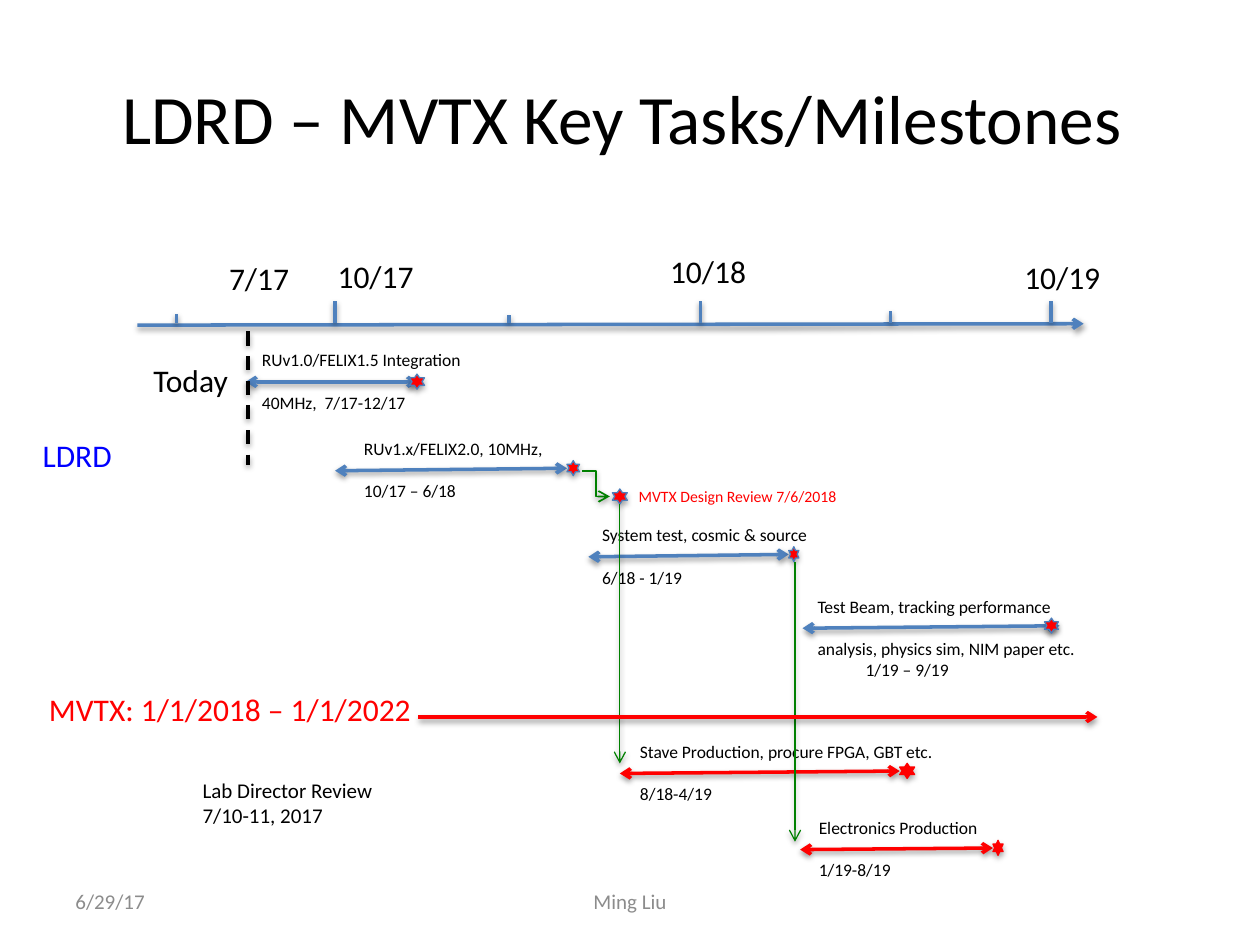
import pptx
import pptx.dml.color
import pptx.enum.dml
import pptx.enum.shapes
import pptx.enum.text
import pptx.oxml
import pptx.oxml.ns
import pptx.util

Pt = pptx.util.Pt
Kind = pptx.enum.shapes.MSO_CONNECTOR
Align = pptx.enum.text.PP_ALIGN
Anchor = pptx.enum.text.MSO_ANCHOR

BLACK, GREY, RED = "000000", "8C8C8C", "FF0000"
BLUE, EDGE, GREEN, LABEL = "4F81BD", "4B7EBC", "008000", "0000FF"


def tint(code):
    return pptx.dml.color.RGBColor.from_string(code)


class Chart:
    """Holds the text style and the current slide; all lengths are points."""

    font = "Calibri"

    def __init__(self, slide):
        self.slide = slide
        self.shapes = slide.shapes

    def shade(self, shape, dist, alpha):
        shape._element.spPr.append(pptx.oxml.parse_xml(
            f'<a:effectLst {pptx.oxml.ns.nsdecls("a")}>'
            f'<a:outerShdw blurRad="{Pt(3.1)}" dist="{Pt(dist)}" dir="5400000" rotWithShape="0">'
            f'<a:srgbClr val="{BLACK}"><a:alpha val="{alpha}000"/></a:srgbClr>'
            '</a:outerShdw></a:effectLst>'))

    def words(self, para, text, size, color):
        run = para.add_run()
        run.text = text
        run.font.name = self.font
        run.font.size = Pt(size)
        run.font.color.rgb = tint(color)

    def title(self, text, x, y, w, h, size):
        box = self.shapes.title
        box.left, box.top, box.width, box.height = Pt(x), Pt(y), Pt(w), Pt(h)
        frame = box.text_frame
        frame.vertical_anchor = Anchor.MIDDLE
        para = frame.paragraphs[0]
        para.alignment = Align.CENTER
        self.words(para, text, size, BLACK)

    def text(self, lines, x, y, w, h, size=18, color=BLACK, wrap=False,
             align=Align.LEFT, anchor=Anchor.TOP):
        frame = self.shapes.add_textbox(Pt(x), Pt(y), Pt(w), Pt(h)).text_frame
        frame.word_wrap = wrap
        frame.vertical_anchor = anchor
        for i, line in enumerate(lines):
            para = frame.add_paragraph() if i else frame.paragraphs[0]
            para.alignment = align
            self.words(para, line, size, color)
        return frame

    def line(self, x1, y1, x2, y2, color=BLUE, width=2, ends="", kind=Kind.STRAIGHT, dash=None):
        link = self.shapes.add_connector(kind, Pt(x1), Pt(y1), Pt(x2), Pt(y2))
        link.line.color.rgb = tint(color)
        link.line.width = Pt(width)
        if dash:
            link.line.dash_style = dash
        stroke = link._element.spPr.get_or_add_ln()
        for end in ends.split():
            stroke.append(pptx.oxml.parse_xml(
                f'<a:{end}End {pptx.oxml.ns.nsdecls("a")} type="arrow"/>'))
        self.shade(link, 1.6, 38)

    def star(self, x, y, w, edge=EDGE):
        star = self.shapes.add_shape(pptx.enum.shapes.MSO_SHAPE.STAR_6_POINT,
                                     Pt(x), Pt(y), Pt(w), Pt(8.6))
        star.fill.solid()
        star.fill.fore_color.rgb = tint(RED)
        star.line.color.rgb = tint(edge)
        star.line.width = Pt(0.75)
        self.shade(star, 1.8, 35)

    def task(self, lines, left, width, x1, x2, y, rise, star, size, color=BLUE):
        """A span from x1 to x2 with text above and below and a star at its end."""
        self.line(x1, y, x2, y - rise, color, ends="head tail")
        self.star(star, y - rise - 4.4, size, RED if color == RED else EDGE)
        high = 44 if len(lines) == 2 else 55.4
        frame = self.text(lines, left, y - 22.2, width, high, 10, wrap=True)
        paras = frame.paragraphs
        paras[1].space_before = Pt(12.2)
        for para in paras[2:]:
            para._p.get_or_add_pPr().set("marL", str(Pt(27.4)))


def main():
    deck = pptx.Presentation()
    deck.slide_width, deck.slide_height = Pt(720), Pt(540)
    chart = Chart(deck.slides.add_slide(deck.slide_layouts[5]))
    chart.title("LDRD – MVTX Key Tasks/Milestones ", 36, 21.6, 648, 90, 39.6)

    # Time axis with long and short ticks
    chart.line(78.5, 185.8, 619.2, 185, ends="tail")
    for x, top in [(100.8, 179.3), (191.5, 172.1), (290.9, 180),
                   (400.3, 172.1), (509, 177.8), (600.5, 172.1)]:
        chart.line(x, top, x, 184.5)
    for name, x, y, w in [("7/17", 123.8, 144.7, 49), ("10/17", 185.8, 143.3, 58.3),
                          ("10/18", 375.8, 140.4, 58.3), ("10/19", 578.2, 144, 58.3)]:
        chart.text([name], x, y, w, 28.8)

    # Tasks
    for row in [
        (["RUv1.0/FELIX1.5 Integration", "40MHz,  7/17-12/17"],
         142.6, 159, 140.4, 239, 218.2, 0, 234, 8.6),
        (["RUv1.x/FELIX2.0, 10MHz,", "10/17 – 6/18"],
         200.9, 155.5, 191.5, 324, 269, 1.4, 324, 7.2),
        (["System test, cosmic & source", "6/18 - 1/19"],
         337, 136, 336.2, 450.7, 318.2, 1.4, 450.7, 5.8),
        (["Test Beam, tracking performance", "analysis, physics sim, NIM paper etc.",
          "1/19 – 9/19"],
         460.1, 173, 458.6, 605.5, 359, 1.4, 596.9, 7.9),
        (["Stave Production, procure FPGA, GBT etc.", "8/18-4/19"],
         358.6, 187, 354.2, 514.1, 442, 1.4, 514.1, 8.6, RED),
        (["Electronics Production", "1/19-8/19"],
         460.8, 125, 457.2, 567.4, 485.5, 0.9, 567.4, 5.8, RED),
    ]:
        chart.task(*row)

    # Design review and the steps that depend on it
    chart.star(349.9, 279.4, 8.6)
    chart.text(["MVTX Design Review 7/6/2018"], 357.8, 274.3, 128.9, 18, 9, RED)
    chart.line(332.6, 269.3, 348.5, 283.7, GREEN, 1, "tail", Kind.ELBOW)
    chart.line(354.2, 288, 354.2, 436.3, GREEN, 0.75, "tail")
    chart.line(454.3, 321.1, 454.3, 481, GREEN, 0.75, "tail")

    # Project labels and today mark
    chart.text(["LDRD"], 17.3, 245.5, 54.7, 28.8, color=LABEL)
    chart.text(["MVTX: 1/1/2018 – 1/1/2022"], 20.9, 391, 223.2, 28.8, color=RED)
    chart.line(239, 409.7, 627.1, 409.7, RED, ends="tail")
    chart.line(141.8, 189.4, 141.8, 265.7, BLACK,
               dash=pptx.enum.dml.MSO_LINE.DASH)
    chart.text(["Today"], 80.6, 203, 59.8, 28.8)
    chart.text(["Lab Director Review", "7/10-11, 2017"], 108.7, 440.6, 115.2, 36, 12)

    # Footer
    for text, x, w, align in [("6/29/17", 36, 168, Align.LEFT),
                              ("Ming Liu", 246, 228, Align.CENTER)]:
        chart.text([text], x, 500.4, w, 28.8, 12, GREY, True, align, Anchor.MIDDLE)

    deck.save("out.pptx")


if __name__ == "__main__":
    main()
